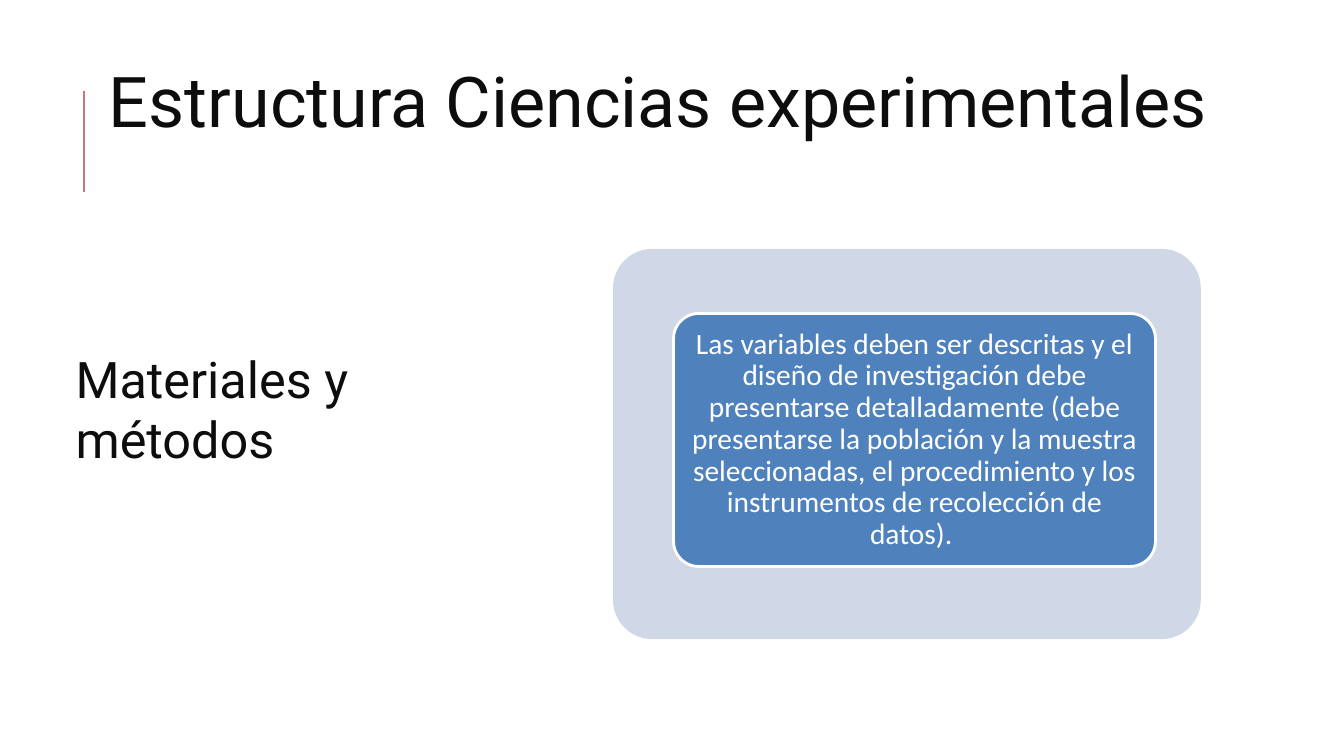
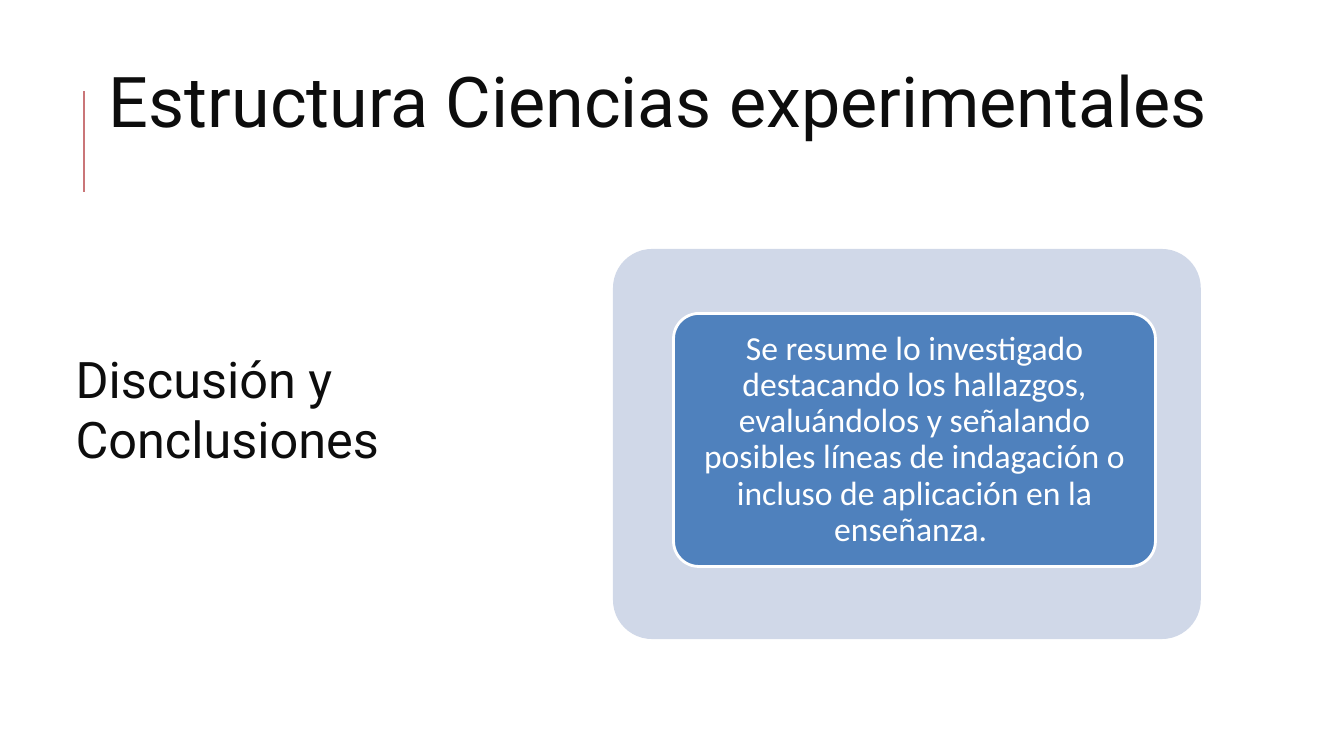
from lxml import etree
from pptx import Presentation
from pptx.dml.color import RGBColor
from pptx.enum.shapes import MSO_CONNECTOR, MSO_SHAPE
from pptx.enum.text import MSO_ANCHOR, MSO_AUTO_SIZE, PP_ALIGN
from pptx.oxml.ns import qn
from pptx.util import Inches, Pt

STRAIGHT = MSO_CONNECTOR.STRAIGHT
ROUNDED = MSO_SHAPE.ROUNDED_RECTANGLE
TOP, MIDDLE = MSO_ANCHOR.TOP, MSO_ANCHOR.MIDDLE
LEFT, CENTER = PP_ALIGN.LEFT, PP_ALIGN.CENTER
NO_RESIZE = MSO_AUTO_SIZE.NONE

INK = RGBColor(0x0D, 0x0D, 0x0D)
WHITE = RGBColor(0xFF, 0xFF, 0xFF)
ROSE = RGBColor(0xCA, 0x76, 0x78)
PALE_BLUE = RGBColor(0xD0, 0xD8, 0xE8)
BLUE = RGBColor(0x4F, 0x81, 0xBD)

HEADING = "Estructura Ciencias experimentales"
HEADING_BOX = (0.83, 0.57, 11.17, 2.52)
SECTION_BOX = (0.75, 3.45, 3.75, 1.21)
CARD_BOX = (6.08, 2.47, 5.83, 3.87)
SECTIONS = [
    ("Materiales y métodos",
     "Las variables deben ser descritas y el diseño de investigación debe "
     "presentarse detalladamente (debe presentarse la población y la muestra "
     "seleccionadas, el procedimiento y los instrumentos de recolección de "
     "datos). ", 21, 0.06),
    ("Discusión y Conclusiones",
     "Se resume lo investigado destacando los hallazgos, evaluándolos y "
     "señalando posibles líneas de indagación o incluso de aplicación en la "
     "enseñanza. ", 24, 0.07),
]


def write(box, text, font, size, color, align=LEFT, anchor=TOP, inset=0):
    """Fill a box with one formatted paragraph and return the paragraph."""
    frame = box.text_frame
    frame.word_wrap = True
    frame.auto_size = NO_RESIZE
    frame.vertical_anchor = anchor
    frame.margin_left = frame.margin_right = Inches(inset)
    frame.margin_top = frame.margin_bottom = Inches(inset)
    para = frame.paragraphs[0]
    para.alignment = align
    span = para.add_run()
    span.text = text
    span.font.name = font
    span.font.size = Pt(size)
    span.font.color.rgb = color
    return para


def add_heading(page, left, top, width, height):
    """Draw the accent rule and the heading beside it."""
    rule = page.shapes.add_connector(
        STRAIGHT, Inches(left), Inches(top + 1.33), Inches(left), Inches(top + 0.33))
    rule.line.color.rgb = ROSE
    rule.line.width = Pt(1.5)
    etree.SubElement(rule._element.spPr, qn("a:effectLst"))
    gap = 0.25
    box = page.shapes.add_textbox(
        Inches(left + gap), Inches(top), Inches(width - gap), Inches(height))
    write(box, HEADING, "Roboto", 50, INK)


def add_section_title(page, text, left, top, width, height):
    """Place the section name in the title placeholder."""
    title = page.shapes.title
    title.left, title.top = Inches(left), Inches(top)
    title.width, title.height = Inches(width), Inches(height)
    write(title, text, "Roboto", 36, INK)


def add_panel(page, color, left, top, width, height):
    """Add a rounded panel with a plain fill and no outline."""
    panel = page.shapes.add_shape(
        ROUNDED, Inches(left), Inches(top), Inches(width), Inches(height))
    panel.adjustments[0] = 0.1
    panel.shadow.inherit = False
    panel.fill.solid()
    panel.fill.fore_color.rgb = color
    panel.line.fill.background()
    return panel


def add_card(page, text, size, inset, left, top, width, height):
    """Draw a pale panel holding a blue panel with the description."""
    add_panel(page, PALE_BLUE, left, top, width, height)
    card = add_panel(page, BLUE, left + 0.6, top + 0.64, width - 1.05, height - 1.36)
    card.line.color.rgb = WHITE
    card.line.width = Pt(2)
    para = write(card, text, "Calibri", size, WHITE, CENTER, MIDDLE, inset)
    para.line_spacing = 0.9


def add_section_slide(deck, name, description, size, inset):
    """Build one slide with heading, section name and description card."""
    page = deck.slides.add_slide(deck.slide_layouts[5])
    add_section_title(page, name, *SECTION_BOX)
    add_heading(page, *HEADING_BOX)
    add_card(page, description, size, inset, *CARD_BOX)


def main():
    """Build and save the deck."""
    deck = Presentation()
    deck.slide_width, deck.slide_height = Inches(13.33), Inches(7.5)
    for section in SECTIONS:
        add_section_slide(deck, *section)
    deck.save("out.pptx")


if __name__ == "__main__":
    main()
